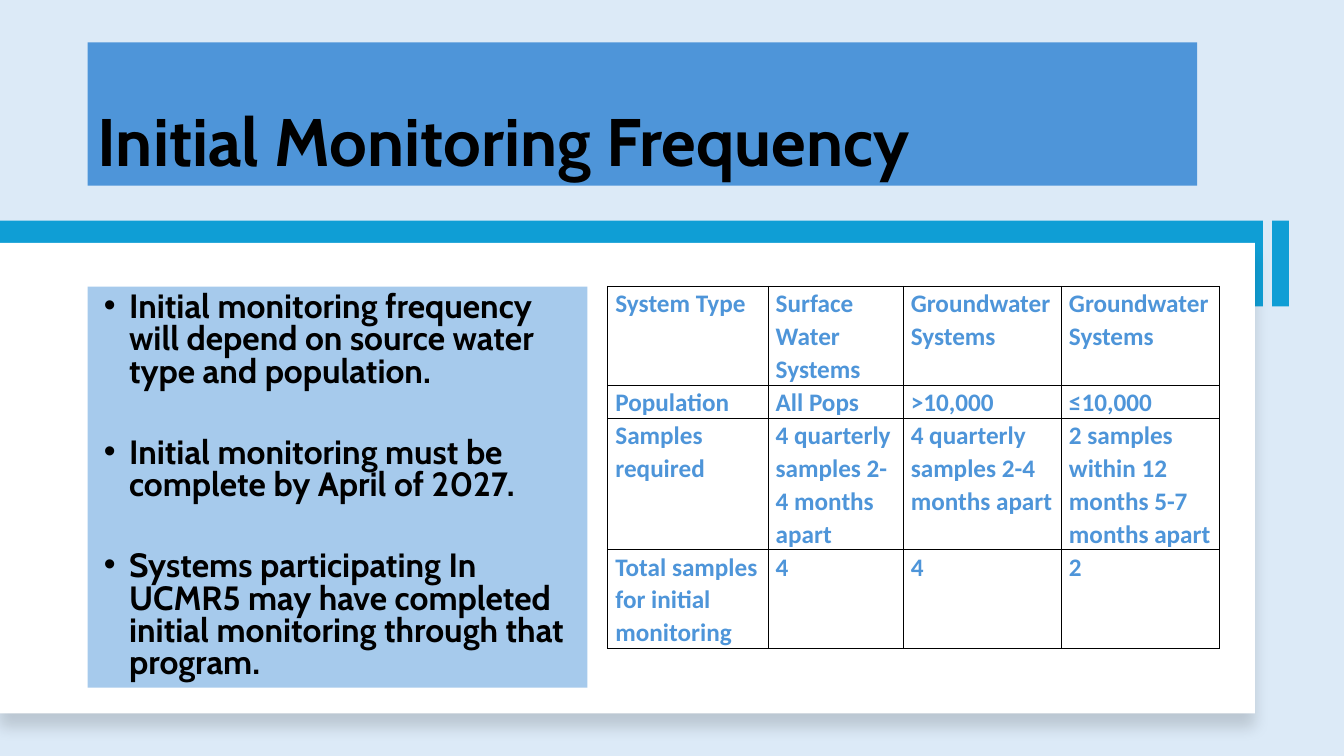
from lxml import etree
from pptx import Presentation
from pptx.dml.color import RGBColor
from pptx.enum.shapes import MSO_SHAPE
from pptx.enum.text import MSO_ANCHOR, MSO_AUTO_SIZE, PP_ALIGN
from pptx.oxml.ns import qn
from pptx.util import Pt

RECT = MSO_SHAPE.RECTANGLE
LEFT = PP_ALIGN.LEFT
TOP, MIDDLE, BOTTOM = MSO_ANCHOR.TOP, MSO_ANCHOR.MIDDLE, MSO_ANCHOR.BOTTOM
NO_FIT = MSO_AUTO_SIZE.NONE

SKY = RGBColor(0xDC, 0xEA, 0xF7)
BLUE = RGBColor(0x4E, 0x95, 0xD9)
PALE = RGBColor(0xA6, 0xCA, 0xEC)
CYAN = RGBColor(0x0F, 0x9E, 0xD5)
WHITE = RGBColor(0xFF, 0xFF, 0xFF)
BLACK = RGBColor(0, 0, 0)

POINTS = [
    "Initial monitoring frequency will depend on source water type and population.",
    "Initial monitoring must be complete by April of 2027.",
    "Systems participating In UCMR5 may have completed initial monitoring through that program.",
]
ROWS = [
    ["System Type", "Surface Water Systems", "Groundwater Systems", "Groundwater Systems"],
    ["Population", "All Pops", ">10,000", "≤10,000"],
    ["Samples required", "4 quarterly samples 2-4 months apart",
     "4 quarterly samples 2-4 months apart", "2 samples within 12 months 5-7 months apart"],
    ["Total samples for initial monitoring", "4", "4", "2"],
]
WIDTHS = [114.5, 96.5, 113, 113]
HEIGHTS = [67, 23.5, 88.5, 67]


def add(node, tag, **attrs):
    return etree.SubElement(node, qn(tag), attrs)


class Page:
    head, text = "Cabin", "Calibri"

    def __init__(self, deck):
        self.slide = deck.slides.add_slide(deck.slide_layouts[1])
        self.shapes = self.slide.shapes
        fill = self.slide.background.fill
        fill.solid()
        fill.fore_color.rgb = SKY

    def run(self, para, words, size, font, color):
        run = para.add_run()
        run.text = words
        run.font.size, run.font.name, run.font.bold = Pt(size), font, True
        run.font.color.rgb = color

    def place(self, shape, box, color, anchor):
        shape.left, shape.top, shape.width, shape.height = map(Pt, box)
        shape.fill.solid()
        shape.fill.fore_color.rgb = color
        frame = shape.text_frame
        frame.auto_size, frame.word_wrap = NO_FIT, True
        frame.vertical_anchor = anchor
        return frame

    def title(self, words, box):
        para = self.place(self.shapes.title, box, BLUE, BOTTOM).paragraphs[0]
        para.alignment, para.line_spacing = LEFT, 0.9
        self.run(para, words, 48, self.head, BLACK)

    def bar(self, box, color):
        shape = self.shapes.add_shape(RECT, *map(Pt, box))
        shape.shadow.inherit = False
        shape.fill.solid()
        shape.fill.fore_color.rgb = color
        shape.line.fill.background()
        return shape

    def panel(self, box):
        props = self.bar(box, WHITE)._element.spPr
        glow = add(props.find(qn("a:effectLst")), "a:outerShdw",
                   blurRad=str(Pt(11)), dist=str(Pt(10)), dir="5400000",
                   algn="t", rotWithShape="0")
        tint = add(glow, "a:srgbClr", val=str(BLACK))
        add(tint, "a:alpha", val="15000")

    def bullets(self, items, box):
        body = self.slide.placeholders[1]
        # Bring the list in front of the panel
        self.shapes._spTree.append(body._element)
        frame = self.place(body, box, PALE, MIDDLE)
        for i, words in enumerate(items):
            para = frame.add_paragraph() if i else frame.paragraphs[0]
            para.alignment, para.line_spacing = LEFT, 0.8
            para.space_before, para.space_after = Pt(35 if i else 0), Pt(0)
            props = para._p.get_or_add_pPr()
            props.set("marL", str(Pt(22.5)))
            props.set("indent", str(Pt(-18)))
            add(props, "a:buFont", typeface="Arial")
            add(props, "a:buChar", char="•")
            self.run(para, words, 24, self.head, BLACK)

    def border(self, cell):
        props = cell._tc.get_or_add_tcPr()
        for i, side in enumerate(("a:lnL", "a:lnR", "a:lnT", "a:lnB")):
            line = etree.Element(qn(side), w=str(Pt(1)))
            add(add(line, "a:solidFill"), "a:srgbClr", val=str(BLACK))
            props.insert(i, line)

    def table(self, rows, left, top):
        size = Pt(sum(WIDTHS)), Pt(sum(HEIGHTS))
        grid = self.shapes.add_table(len(rows), len(WIDTHS), Pt(left), Pt(top), *size).table
        grid.first_row = grid.horz_banding = False
        for col, width in zip(grid.columns, WIDTHS):
            col.width = Pt(width)
        for r, row in enumerate(rows):
            grid.rows[r].height = Pt(HEIGHTS[r])
            for c, words in enumerate(row):
                cell = grid.cell(r, c)
                cell.margin_left = cell.margin_right = Pt(5.4)
                cell.margin_top = cell.margin_bottom = Pt(0)
                cell.vertical_anchor = TOP
                cell.fill.background()
                self.border(cell)
                para = cell.text_frame.paragraphs[0]
                para.line_spacing = 1.07
                self.run(para, words, 18, self.text, BLUE)


def main():
    deck = Presentation()
    deck.slide_width, deck.slide_height = Pt(960), Pt(540)
    page = Page(deck)

    # Title band
    page.title("Initial Monitoring Frequency", (62.5, 30.2, 792.6, 102.5))

    # Accent bars and white panel
    page.bar((0, 157.6, 902, 61.2), CYAN)
    page.panel((0, 173.5, 896.4, 336))

    # List
    page.bullets(POINTS, (62.5, 204.7, 357, 286.4))
    page.bar((908.7, 157.6, 12, 61.2), CYAN)

    # Sampling table
    page.table(ROWS, 434.2, 204.7)

    deck.save("out.pptx")


if __name__ == "__main__":
    main()
